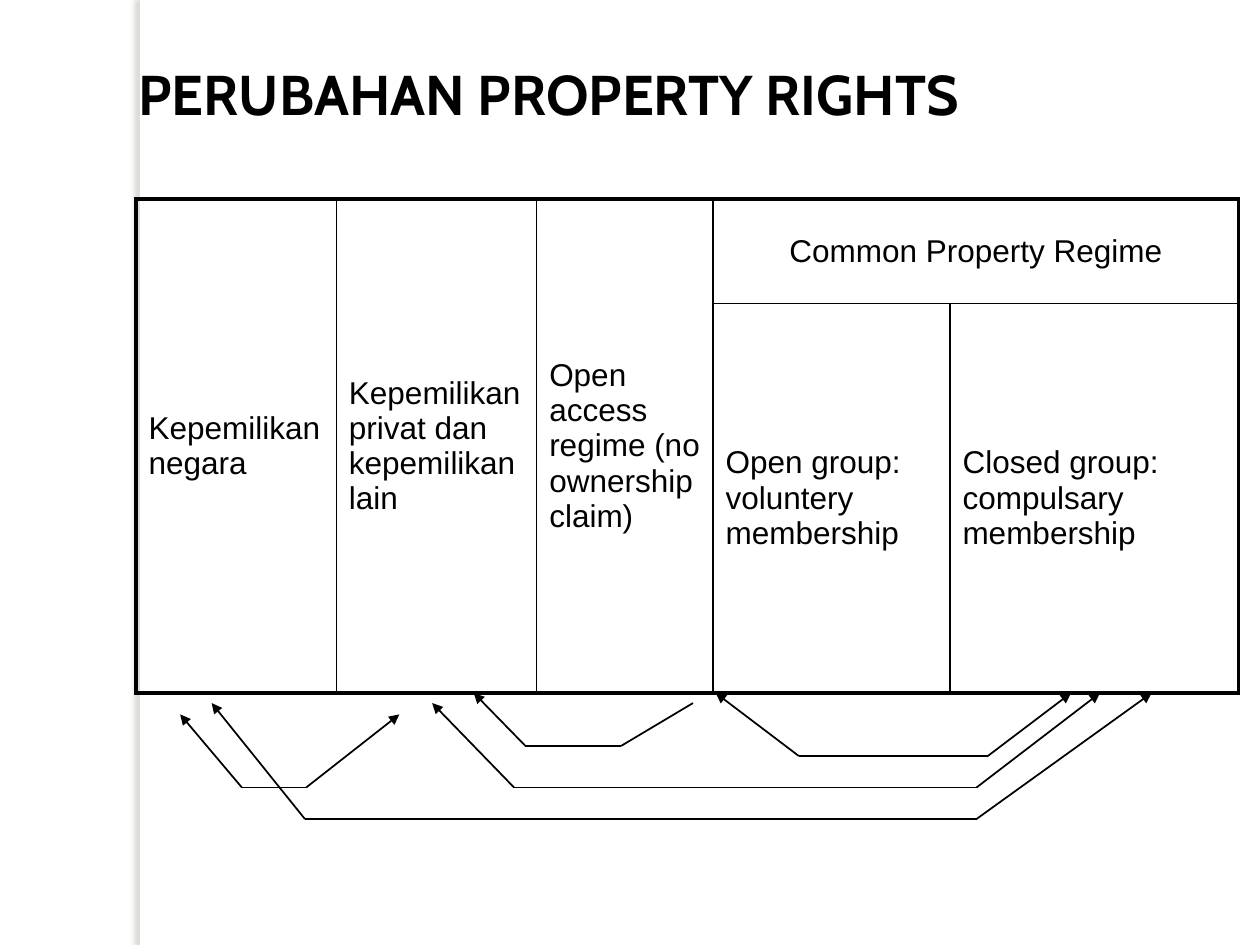
from lxml.etree import SubElement
from pptx import Presentation
from pptx.dml.color import RGBColor
from pptx.enum.shapes import MSO_CONNECTOR, MSO_SHAPE
from pptx.enum.text import MSO_ANCHOR, PP_ALIGN
from pptx.oxml import parse_xml
from pptx.oxml.ns import nsdecls, qn
from pptx.util import Inches, Pt

# Content
TITLE = "PERUBAHAN PROPERTY RIGHTS"
COLS = [1.59, 1.59, 1.4, 1.88, 2.29]
ROWS = [0.83, 3.09]
LEFT, TOP = 1.08, 1.58
BASE = TOP + sum(ROWS)
CELLS = [  # row, column, rows spanned, columns spanned, text
    (0, 0, 2, 1, "Kepemilikan negara"),
    (0, 1, 2, 1, "Kepemilikan privat dan kepemilikan lain"),
    (0, 2, 2, 1, "Open access regime (no ownership claim)"),
    (0, 3, 1, 2, "Common Property Regime"),
    (1, 3, 1, 1, "Open group: voluntery membership"),
    (1, 4, 1, 1, "Closed group: compulsary membership"),
]
# Links below the table: four x values from right to left, drop of the
# right end, the flat part and the left end, arrowhead at the right end
LINKS = [
    ((8.5, 7.84, 6.34, 5.68), (0, 0.5, 0), True),
    ((8.73, 7.75, 4.08, 3.43), (0, 0.75, 0.08), True),
    ((5.5, 4.93, 4.17, 3.76), (0.08, 0.42, 0), False),
    ((3.17, 2.43, 1.92, 1.43), (0.17, 0.75, 0.17), True),
    ((9.14, 7.75, 2.42, 1.68), (0, 1, 0.08), True),
]
BLACK, WHITE = "000000", "FFFFFF"
THICK, THIN = 2.25, 1


def paint(target, color):
    if hasattr(target, "solid"):
        target.solid()
        target = target.fore_color
    target.rgb = RGBColor.from_string(color)


def style(para, font, size, bold=False):
    for run in para.runs:
        run.font.name, run.font.size, run.font.bold = font, Pt(size), bold
        paint(run.font.color, BLACK)


def edge(cell, side, width):
    line = SubElement(cell._tc.get_or_add_tcPr(), qn(f"a:ln{side}"), w=str(Pt(width)))
    fill = SubElement(line, qn("a:solidFill"))
    SubElement(fill, qn("a:srgbClr"), val=BLACK)


def link(shapes, start, end, head=False, tail=False):
    ends = [Inches(v) for v in (*start, *end)]
    wire = shapes.add_connector(MSO_CONNECTOR.STRAIGHT, *ends)
    wire.line.width = Pt(1)
    paint(wire.line.fill, BLACK)
    for name, used in (("headEnd", head), ("tailEnd", tail)):
        if used:
            SubElement(wire.line._get_or_add_ln(), qn(f"a:{name}"), type="triangle")
    SubElement(wire._element.spPr, qn("a:effectLst"))


deck = Presentation()
deck.slide_width, deck.slide_height = Inches(10), Inches(7.5)
slide = deck.slides.add_slide(deck.slide_layouts[5])
shapes = slide.shapes

# Strip with a soft shadow, behind everything
strip = shapes.add_shape(MSO_SHAPE.RECTANGLE, Inches(1.11), 0, Inches(0.08), deck.slide_height)
paint(strip.fill, WHITE)
strip.line.fill.background()
strip._element.spPr.append(parse_xml(
    f'<a:effectLst {nsdecls("a")}><a:outerShdw blurRad="{Pt(3)}" dist="{Pt(3)}" '
    'dir="10800000" algn="tl" rotWithShape="0"><a:srgbClr val="736F63">'
    '<a:alpha val="25000"/></a:srgbClr></a:outerShdw></a:effectLst>'))
shapes._spTree.insert(2, strip._element)

# Title
title = shapes.title
title.left, title.top, title.width, title.height = map(Inches, (1, 0.42, 7.75, 0.64))
frame = title.text_frame
frame.text = TITLE
frame.vertical_anchor = MSO_ANCHOR.TOP
frame.paragraphs[0].alignment = PP_ALIGN.JUSTIFY
style(frame.paragraphs[0], "Cabin", 32, True)

# Table
box = [Inches(v) for v in (LEFT, TOP, sum(COLS), sum(ROWS))]
table = shapes.add_table(len(ROWS), len(COLS), *box).table
table.first_row = table.horz_banding = False
for col, width in zip(table.columns, COLS):
    col.width = Inches(width)
for row, height in zip(table.rows, ROWS):
    row.height = Inches(height)
for r, c, down, across, text in CELLS:
    cell = table.cell(r, c)
    if down * across > 1:
        cell.merge(table.cell(r + down - 1, c + across - 1))
    cell.text_frame.text = text
    cell.vertical_anchor = MSO_ANCHOR.MIDDLE
    para = cell.text_frame.paragraphs[0]
    para.alignment = PP_ALIGN.CENTER if across > 1 else PP_ALIGN.LEFT
    para.space_before = Pt(3.6)
    style(para, "Arial", 18)
    outer = {"L": c == 0, "R": c + across == len(COLS),
             "T": r == 0, "B": r + down == len(ROWS)}
    for side, rim in outer.items():
        edge(cell, side, THICK if rim else THIN)
for cell in table.iter_cells():
    cell.fill.background()

# Links between the regimes
for xs, (right, flat, left), head in LINKS:
    drops = (right, flat, flat, left)
    a, b, c, d = [(x, BASE + drop) for x, drop in zip(xs, drops)]
    link(shapes, a, b, head=head)
    link(shapes, b, c)
    link(shapes, c, d, tail=True)

deck.save("out.pptx")
